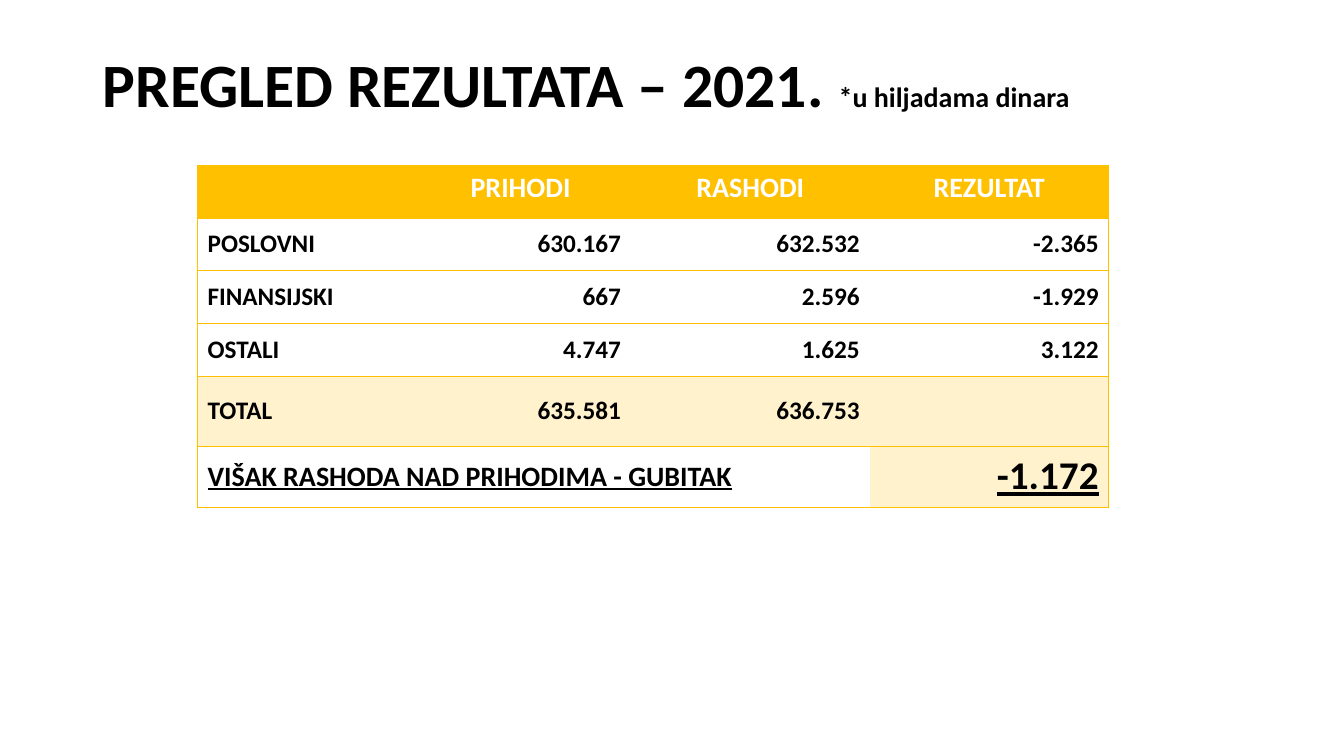
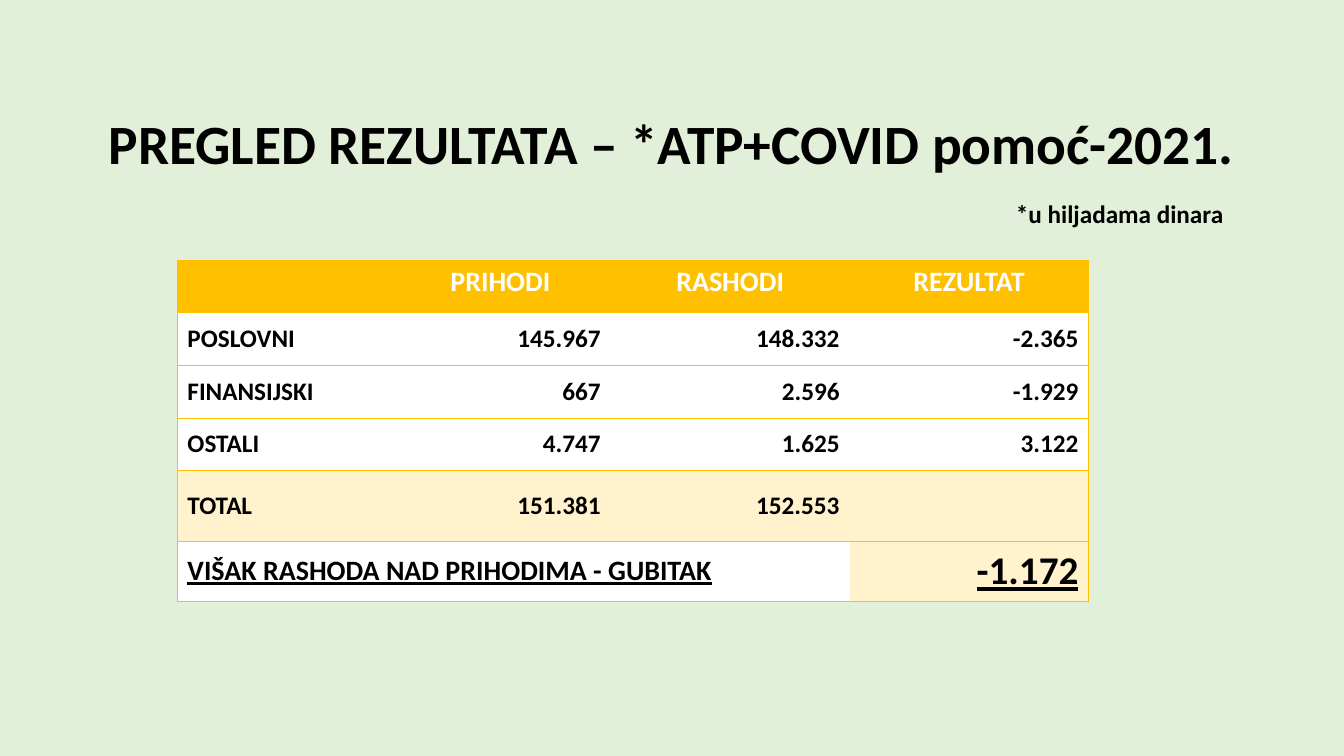
"""Builds two slides, each with a yearly income, expense and result table."""
import pptx
import pptx.dml.color
import pptx.enum.text
import pptx.oxml
import pptx.oxml.ns
import pptx.util

Pt = pptx.util.Pt
RGBColor = pptx.dml.color.RGBColor
ALIGN = pptx.enum.text.PP_ALIGN
MIDDLE = pptx.enum.text.MSO_ANCHOR.MIDDLE
TOP = pptx.enum.text.MSO_ANCHOR.TOP

FONT = "Calibri"
BLACK = RGBColor(0x00, 0x00, 0x00)
WHITE = RGBColor(0xFF, 0xFF, 0xFF)
GOLD = RGBColor(0xFF, 0xC0, 0x00)
CREAM = RGBColor(0xFF, 0xF2, 0xCC)
MINT = RGBColor(0xE2, 0xF0, 0xD9)

COLUMN_WIDTHS = [151.92, 157.68, 170.64, 170.64]
ROW_HEIGHTS = [37.6, 37.6, 37.6, 37.6, 50.4, 43.2]
HEADER, TOTAL, LOSS = 0, 4, 5
NOTE = "*u hiljadama dinara"

REVIEWS = [
    {
        "background": WHITE,
        "title": "PREGLED REZULTATA – 2021. ", "title_size": 44,
        "note_size": 20, "note_below": False,
        "title_box": (66.24, 28.8, 828, 67),
        "table_at": (141.12, 118.08),
        "operating": ["630.167", "632.532"], "total": ["635.581", "636.753"],
    },
    {
        "background": MINT,
        "title": "PREGLED REZULTATA – *ATP+COVID pomoć-2021.", "title_size": 39.6,
        "note_size": 18, "note_below": True,
        "title_box": (70.56, 75, 828, 97),
        "table_at": (126.72, 185.76),
        "operating": ["145.967", "148.332"], "total": ["151.381", "152.553"],
    },
]


def add_text(paragraph, text, size, color=BLACK, underline=None):
    run = paragraph.add_run()
    run.text = text
    run.font.name = FONT
    run.font.size = Pt(size)
    run.font.bold = True
    run.font.underline = underline
    run.font.color.rgb = color


def add_border(cell, side, visible):
    paint = f'<a:solidFill><a:srgbClr val="{GOLD}"/></a:solidFill>' if visible else "<a:noFill/>"
    namespace = pptx.oxml.ns.nsdecls("a")
    border = pptx.oxml.parse_xml(f'<a:ln{side} {namespace} w="{Pt(0.5)}">{paint}</a:ln{side}>')
    cell._tc.get_or_add_tcPr().append(border)


deck = pptx.Presentation()
deck.slide_width, deck.slide_height = Pt(960), Pt(540)

for review in REVIEWS:
    slide = deck.slides.add_slide(deck.slide_layouts[6])
    slide.background.fill.solid()
    slide.background.fill.fore_color.rgb = review["background"]

    heading = slide.shapes.add_textbox(*map(Pt, review["title_box"])).text_frame
    heading.word_wrap = True
    heading.vertical_anchor = MIDDLE
    line = heading.paragraphs[0]
    line.line_spacing = 0.9
    add_text(line, review["title"], review["title_size"])
    if review["note_below"]:
        line = heading.add_paragraph()
        line.line_spacing = 0.9
        line.space_before = Pt(18)
        line._p.get_or_add_pPr().set("marL", str(Pt(648)))
    add_text(line, NOTE, review["note_size"])

    rows = [
        ["", "PRIHODI", "RASHODI", "REZULTAT"],
        ["POSLOVNI", *review["operating"], "-2.365"],
        ["FINANSIJSKI", "667", "2.596", "-1.929"],
        ["OSTALI", "4.747", "1.625", "3.122"],
        ["TOTAL", *review["total"], ""],
        ["VIŠAK RASHODA NAD PRIHODIMA - GUBITAK", "", "", "-1.172"],
    ]
    left, top = review["table_at"]
    results = slide.shapes.add_table(
        len(rows), len(COLUMN_WIDTHS), Pt(left), Pt(top),
        Pt(sum(COLUMN_WIDTHS)), Pt(sum(ROW_HEIGHTS))).table
    results.first_row = False
    results.horz_banding = False
    for column, width in zip(results.columns, COLUMN_WIDTHS):
        column.width = Pt(width)
    for row, height in zip(results.rows, ROW_HEIGHTS):
        row.height = Pt(height)
    results.cell(LOSS, 0).merge(results.cell(LOSS, 2))

    last = len(COLUMN_WIDTHS) - 1
    for r, texts in enumerate(rows):
        for c, text in enumerate(texts):
            cell = results.cell(r, c)
            for side, visible in (("L", c == 0), ("R", c == last), ("T", True), ("B", True)):
                add_border(cell, side, visible)

            if r == HEADER:
                fill = GOLD
            elif r == TOTAL or (r == LOSS and c == last):
                fill = CREAM
            else:
                fill = WHITE
            cell.fill.solid()
            cell.fill.fore_color.rgb = fill
            cell.vertical_anchor = TOP if r == HEADER else MIDDLE

            if not text:
                continue
            if r == LOSS:
                size = 28 if c == last else 20
            else:
                size = 20 if r == HEADER else 18
            entry = cell.text_frame.paragraphs[0]
            if r == HEADER:
                entry.alignment = ALIGN.CENTER
            else:
                entry.alignment = ALIGN.RIGHT if c else ALIGN.LEFT
            add_text(entry, text, size, WHITE if r == HEADER else BLACK, r == LOSS or None)

deck.save("out.pptx")
